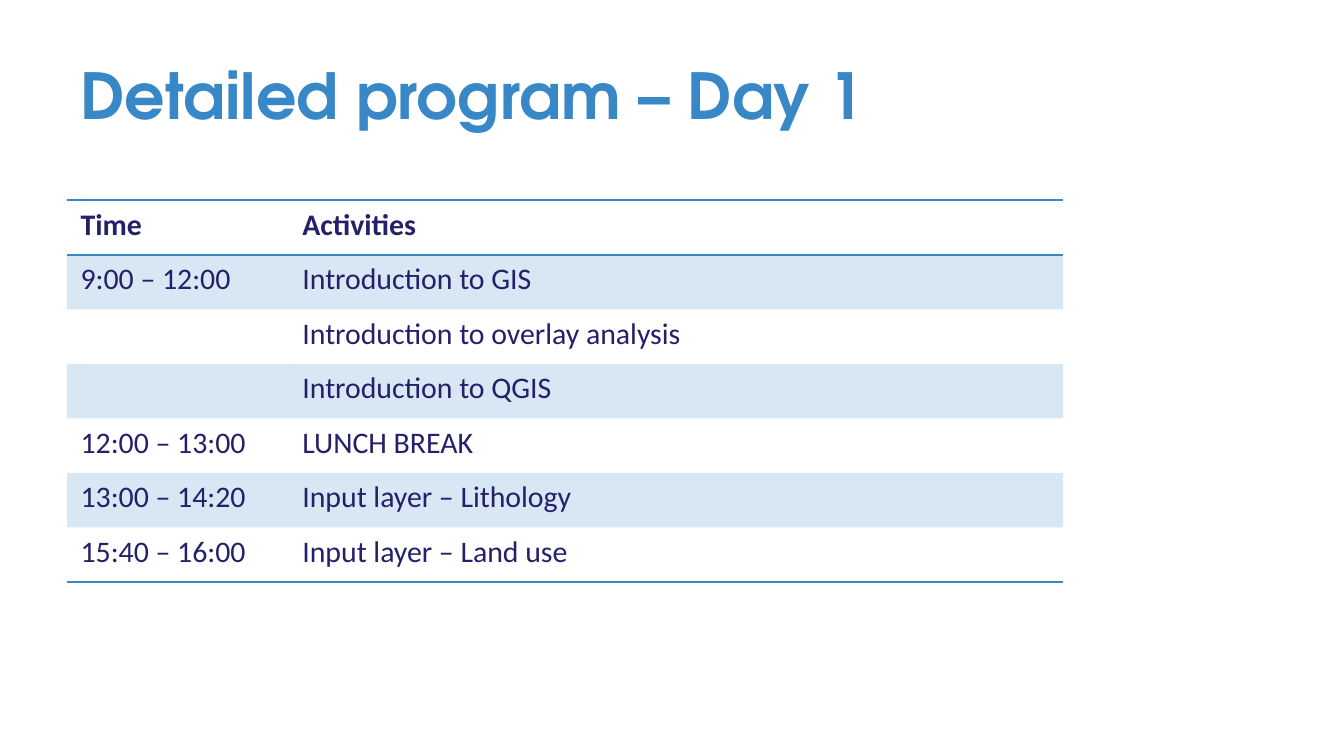
from lxml import etree
from pptx import Presentation
from pptx.dml.color import RGBColor
from pptx.enum.text import MSO_ANCHOR, PP_ALIGN
from pptx.oxml.ns import qn
from pptx.util import Inches, Pt

LEFT = PP_ALIGN.LEFT
MIDDLE = MSO_ANCHOR.MIDDLE

HEADING = "Detailed program – Day 1"
PROGRAM = [
    ("Time", "Activities"),
    ("9:00 – 12:00", "Introduction to GIS"),
    ("", "Introduction to overlay analysis"),
    ("", "Introduction to QGIS"),
    ("12:00 – 13:00", "LUNCH BREAK"),
    ("13:00 – 14:20", "Input layer – Lithology"),
    ("15:40 – 16:00", "Input layer – Land use"),
]
BLUE = "3887C7"
NAVY = "242069"
NO_GRID_STYLE = "{2D5ABB26-0587-4C30-8999-92F81FD0307C}"
SLIDE_WIDTH = Inches(10)
SLIDE_HEIGHT = SLIDE_WIDTH * 9 // 16
MARGIN = Inches(0.5)
COLUMN_WIDTHS = (Inches(1.65), Inches(5.76))
CONTENT_WIDTH = sum(COLUMN_WIDTHS)
TABLE_HEIGHT = Inches(2.84)


def set_font(paragraph, name, size, color, bold):
    font = paragraph.font
    font.name = name
    font.size = Pt(size)
    font.bold = bold
    font.color.rgb = RGBColor.from_string(color)


def add_rule(cell, side):
    properties = cell._tc.get_or_add_tcPr()
    rule = etree.SubElement(properties, qn(f"a:ln{side}"), w=str(Pt(1)))
    paint = etree.SubElement(rule, qn("a:solidFill"))
    etree.SubElement(paint, qn("a:srgbClr"), val=BLUE)


def fill_band(cell):
    cell.fill.solid()
    cell.fill.fore_color.rgb = RGBColor.from_string(BLUE)
    color = cell._tc.tcPr.find(f"{qn('a:solidFill')}/{qn('a:srgbClr')}")
    etree.SubElement(color, qn("a:alpha"), val="20000")


def add_title(slide):
    title = slide.shapes.title
    title.left, title.top = MARGIN, Inches(0.23)
    title.width, title.height = CONTENT_WIDTH, Inches(0.94)
    frame = title.text_frame
    frame.text = HEADING
    frame.word_wrap = True
    frame.vertical_anchor = MIDDLE
    frame.paragraphs[0].alignment = LEFT
    set_font(frame.paragraphs[0], "TeX Gyre Adventor", 34, BLUE, True)


def add_program(slide):
    last = len(PROGRAM) - 1
    table = slide.shapes.add_table(
        len(PROGRAM), len(COLUMN_WIDTHS), MARGIN, Inches(1.49),
        CONTENT_WIDTH, TABLE_HEIGHT,
    ).table
    table._tbl.tblPr.find(qn("a:tableStyleId")).text = NO_GRID_STYLE
    for column, width in zip(table.columns, COLUMN_WIDTHS):
        column.width = width
    for row, entry in enumerate(PROGRAM):
        table.rows[row].height = TABLE_HEIGHT // len(PROGRAM)
        for column, wording in enumerate(entry):
            cell = table.cell(row, column)
            cell.text = wording
            set_font(cell.text_frame.paragraphs[0], "Calibri", 16, NAVY, row == 0)
            if row == 0:
                add_rule(cell, "T")
            if row in (0, last):
                add_rule(cell, "B")
            if row % 2:
                fill_band(cell)
            else:
                cell.fill.background()


def main():
    deck = Presentation()
    deck.slide_width, deck.slide_height = SLIDE_WIDTH, SLIDE_HEIGHT
    slide = deck.slides.add_slide(deck.slide_layouts[5])
    add_title(slide)
    add_program(slide)
    deck.save("out.pptx")


if __name__ == "__main__":
    main()
